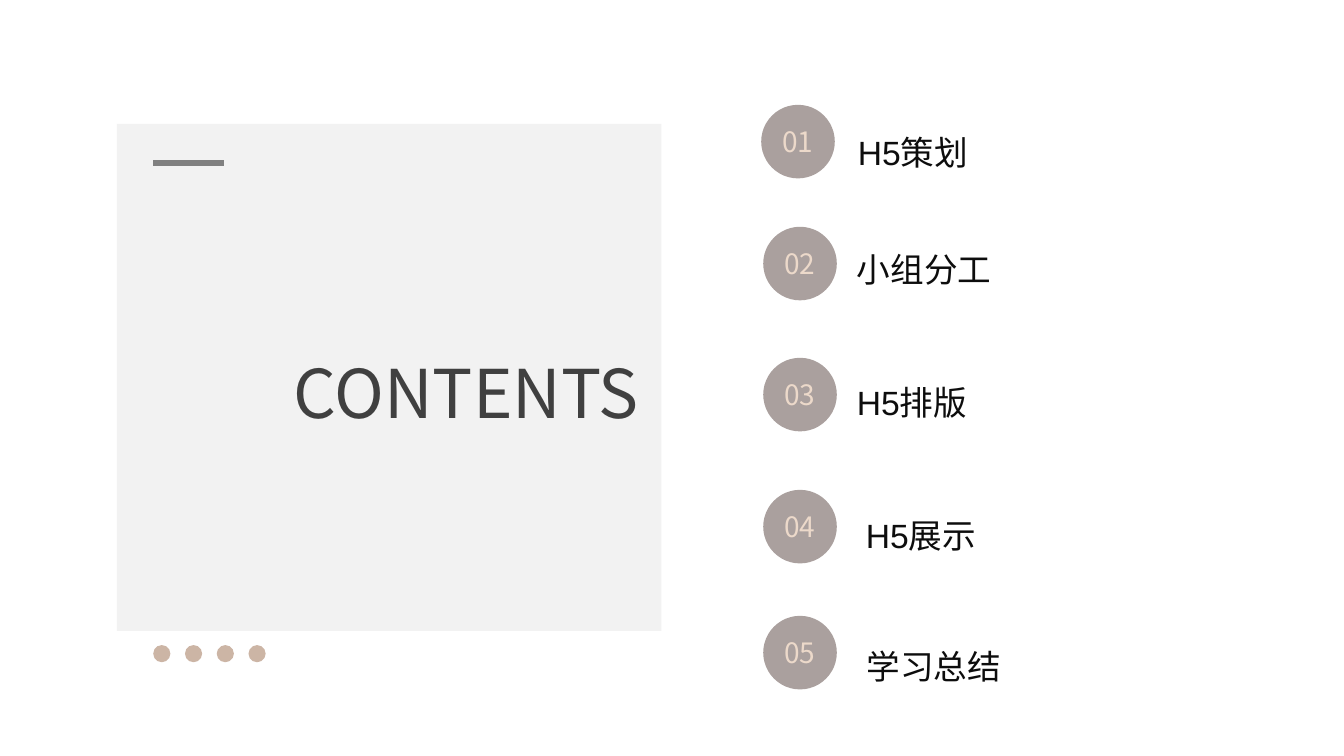
"""Build a contents slide with a title panel and five numbered entries."""
import dataclasses

import lxml.etree
import pptx
import pptx.dml.color
import pptx.enum.shapes
import pptx.enum.text
import pptx.oxml.ns
import pptx.shapes.autoshape
import pptx.shapes.shapetree
import pptx.text.text
import pptx.util

Inches = pptx.util.Inches
Align = pptx.enum.text.PP_ALIGN
Anchor = pptx.enum.text.MSO_ANCHOR
Preset = pptx.enum.shapes.MSO_SHAPE


@dataclasses.dataclass(frozen=True)
class Theme:
    """Colours, fonts and type sizes of the slide."""
    panel: str = "F2F2F2"
    accent_line: str = "808080"
    dot: str = "CCB5A5"
    badge: str = "AAA09E"
    badge_text: str = "ECD9CA"
    title_text: str = "404040"
    entry_text: str = "0D0D0D"
    cjk_font: str = "Noto Sans CJK SC"
    latin_font: str = "Arial"
    title_size: int = 48
    entry_size: int = 24
    badge_size: int = 20


@dataclasses.dataclass(frozen=True)
class Entry:
    """One contents entry: its label, badge corner and label box in inches."""
    label: str
    badge_left: float
    badge_top: float
    label_left: float
    label_top: float
    label_width: float = 2.62
    align: Align = Align.LEFT


THEME = Theme()
BADGE_SIZE = 0.73
DOT_SIZE = 0.17
DOT_PITCH = 0.315
ENTRIES = [
    Entry("H5策划", 7.55, 1.04, 7.7, 1.06, 2.71, Align.CENTER),
    Entry("小组分工", 7.57, 2.25, 8.4, 2.22),
    Entry("H5排版", 7.57, 3.55, 8.4, 3.54),
    Entry("H5展示", 7.57, 4.86, 8.49, 4.86),
    Entry("学习总结", 7.57, 6.11, 7.95, 6.16, align=Align.CENTER),
]


def rgb(value: str) -> pptx.dml.color.RGBColor:
    """Turn a hex string into a colour."""
    return pptx.dml.color.RGBColor.from_string(value)


def write_text(frame: pptx.text.text.TextFrame, text: str, *, size: int, color: str,
               font: str = THEME.cjk_font, align: Align = Align.CENTER,
               anchor: Anchor = Anchor.TOP, spacing: float = 1.0,
               wrap: bool = True) -> None:
    """Write one formatted paragraph into a text frame."""
    frame.word_wrap = wrap
    frame.auto_size = pptx.enum.text.MSO_AUTO_SIZE.NONE
    frame.vertical_anchor = anchor
    paragraph = frame.paragraphs[0]
    paragraph.alignment = align
    paragraph.line_spacing = spacing
    run = paragraph.add_run()
    run.text = text
    run.font.size = pptx.util.Pt(size)
    run.font.color.rgb = rgb(color)
    run.font.name = font
    east_asian = lxml.etree.SubElement(run.font._element, pptx.oxml.ns.qn("a:ea"))
    east_asian.set("typeface", THEME.cjk_font)


def add_filled(shapes: pptx.shapes.shapetree.GroupShapes, preset: Preset, left: float,
               top: float, width: float, height: float,
               color: str) -> pptx.shapes.autoshape.Shape:
    """Add a flat shape without an outline."""
    shape = shapes.add_shape(preset, Inches(left), Inches(top), Inches(width), Inches(height))
    shape.shadow.inherit = False
    shape.fill.solid()
    shape.fill.fore_color.rgb = rgb(color)
    shape.line.fill.background()
    return shape


def add_accent_line(shapes: pptx.shapes.shapetree.SlideShapes) -> None:
    """Draw the short rule at the top of the panel."""
    rule = shapes.add_connector(pptx.enum.shapes.MSO_CONNECTOR.STRAIGHT,
                                Inches(1.52), Inches(1.62), Inches(2.22), Inches(1.62))
    rule.line.color.rgb = rgb(THEME.accent_line)
    rule.line.width = pptx.util.Pt(4.5)
    lxml.etree.SubElement(rule._element.spPr, pptx.oxml.ns.qn("a:effectLst"))


def add_dots(shapes: pptx.shapes.shapetree.SlideShapes) -> None:
    """Draw the row of dots below the panel."""
    dots = shapes.add_group_shape().shapes
    for index in range(4):
        add_filled(dots, Preset.OVAL, 1.52 + index * DOT_PITCH, 6.4,
                   DOT_SIZE, DOT_SIZE, THEME.dot)


def add_entry(shapes: pptx.shapes.shapetree.SlideShapes, number: int, entry: Entry) -> None:
    """Draw a numbered badge with its label."""
    members = shapes.add_group_shape().shapes
    badge = add_filled(members, Preset.OVAL, entry.badge_left, entry.badge_top,
                       BADGE_SIZE, BADGE_SIZE, THEME.badge)
    write_text(badge.text_frame, f"{number:02d}", size=THEME.badge_size,
               color=THEME.badge_text, anchor=Anchor.MIDDLE, wrap=False)
    label = members.add_textbox(Inches(entry.label_left), Inches(entry.label_top),
                                Inches(entry.label_width), Inches(0.71))
    write_text(label.text_frame, entry.label, size=THEME.entry_size, color=THEME.entry_text,
               font=THEME.latin_font, align=entry.align, spacing=1.5)


def main() -> None:
    """Build and save the slide."""
    deck = pptx.Presentation()
    deck.slide_width, deck.slide_height = Inches(13.33), Inches(7.5)
    slide = deck.slides.add_slide(deck.slide_layouts.get_by_name("Title Only"))
    title = slide.shapes.title
    panel = add_filled(slide.shapes, Preset.RECTANGLE, 1.16, 1.23, 5.4, 5.03, THEME.panel)
    panel._element.addnext(title._element)
    title.left, title.top = Inches(2.31), Inches(3.44)
    title.width, title.height = Inches(4.63), Inches(0.91)
    write_text(title.text_frame, "CONTENTS", size=THEME.title_size, color=THEME.title_text)
    add_accent_line(slide.shapes)
    add_dots(slide.shapes)
    for number, entry in enumerate(ENTRIES, start=1):
        add_entry(slide.shapes, number, entry)
    deck.save("out.pptx")


if __name__ == "__main__":
    main()
